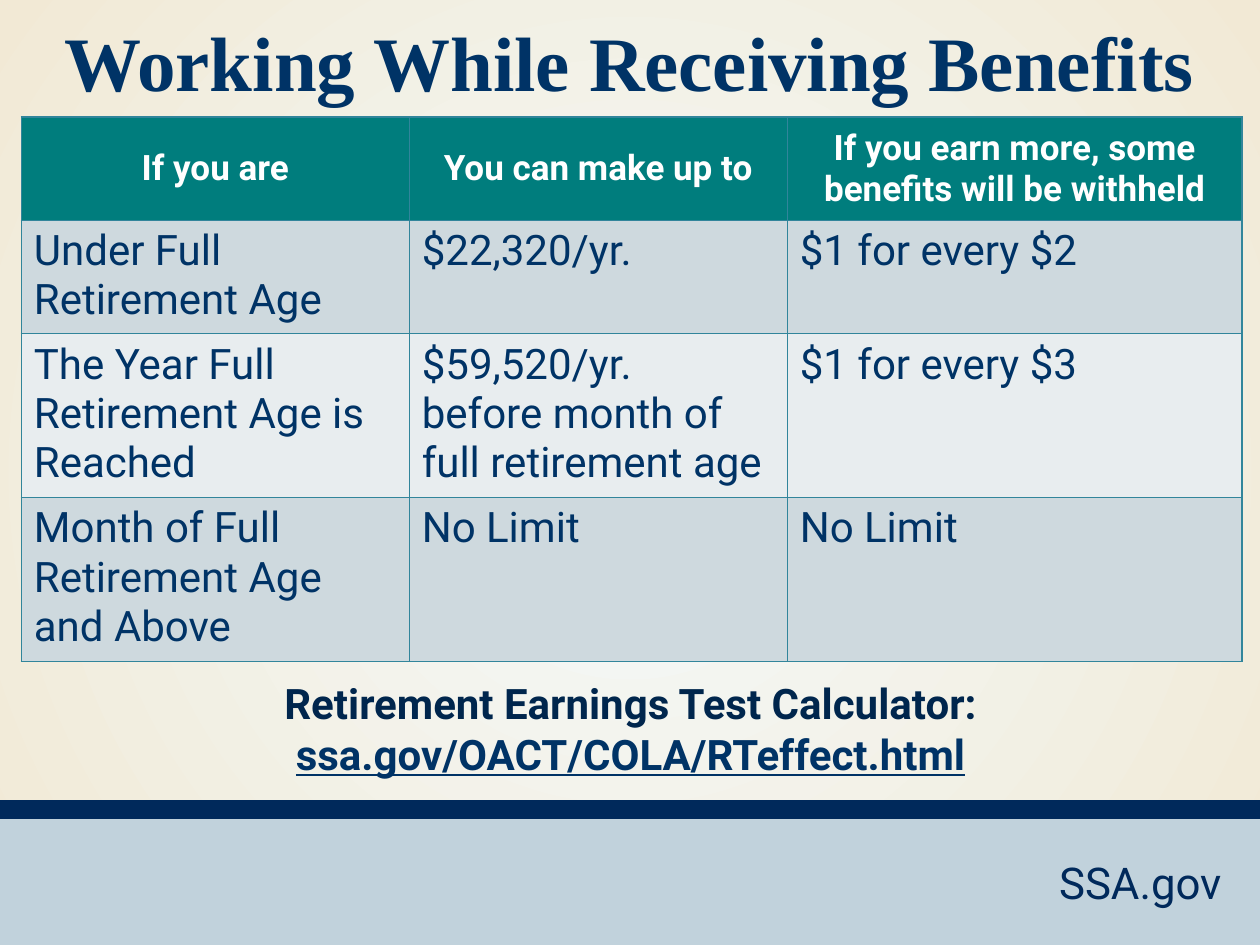
from lxml import etree
from pptx import Presentation
from pptx.dml.color import RGBColor
from pptx.enum.shapes import MSO_SHAPE
from pptx.enum.text import MSO_ANCHOR, MSO_AUTO_SIZE, PP_ALIGN
from pptx.oxml.ns import qn
from pptx.util import Cm, Pt

RECT = MSO_SHAPE.RECTANGLE
TOP, MIDDLE = MSO_ANCHOR.TOP, MSO_ANCHOR.MIDDLE
LEFT, CENTER, RIGHT = PP_ALIGN.LEFT, PP_ALIGN.CENTER, PP_ALIGN.RIGHT
NO_AUTOFIT = MSO_AUTO_SIZE.NONE

GLOW = RGBColor(0xF3, 0xFA, 0xFB)
CREAM = RGBColor(0xF2, 0xE9, 0xD5)
NAVY = RGBColor(0x00, 0x29, 0x5B)
INK = RGBColor(0x00, 0x33, 0x66)
DARK_INK = RGBColor(0x00, 0x26, 0x4D)
MIST = RGBColor(0xC1, 0xD2, 0xDC)
TEAL = RGBColor(0x00, 0x7D, 0x7D)
BORDER = RGBColor(0x31, 0x85, 0x9B)
BAND_DARK = RGBColor(0xCE, 0xD9, 0xDE)
BAND_LIGHT = RGBColor(0xE8, 0xED, 0xEF)
WHITE = RGBColor(0xFF, 0xFF, 0xFF)

SANS, SERIF = "Roboto", "Times New Roman"

ROWS = [
    ["If you are", "You can make up to",
     "If you earn more, some benefits will be withheld"],
    ["Under Full Retirement Age", "$22,320/yr.", "$1 for every $2"],
    ["The Year Full Retirement Age is Reached",
     "$59,520/yr.\vbefore month of full retirement age", "$1 for every $3"],
    ["Month of Full Retirement Age\vand Above", "No Limit", "No Limit"],
]
COL_WIDTHS = [7.82, 7.62, 9.17]
ROW_HEIGHTS = [2.08, 2.08, 2.79, 2.69]
CALCULATOR = [("Retirement Earnings Test Calculator:", DARK_INK, False),
              ("ssa.gov/OACT/COLA/RTeffect.html", INK, True)]


def format_paragraph(p, size, color, align, font=SANS, bold=False, underline=None):
    p.alignment = align
    for r in p.runs:
        f = r.font
        f.name, f.size, f.bold, f.underline = font, Pt(size), bold, underline
        f.color.rgb = color


def place(s, left, top, width, height):
    s.left, s.top, s.width, s.height = Cm(left), Cm(top), Cm(width), Cm(height)


def add_background(slide):
    fill = slide.background.fill
    fill.gradient()
    for stop, color in zip(fill.gradient_stops, (GLOW, CREAM)):
        stop.color.rgb = color
    # Radial gradient from the centre
    grad = slide.element.find(".//" + qn("a:gradFill"))
    grad.remove(grad.find(qn("a:lin")))
    circle = etree.SubElement(grad, qn("a:path"), path="circle")
    etree.SubElement(circle, qn("a:fillToRect"),
                     dict.fromkeys("ltrb", "50000"))


def add_bar(slide, left, top, width, height, color):
    s = slide.shapes.add_shape(RECT, Cm(left), Cm(top), Cm(width), Cm(height))
    s.shadow.inherit = False
    s.fill.solid()
    s.fill.fore_color.rgb = color
    s.line.fill.background()


def add_footer(slide, left, top, width, height):
    add_bar(slide, left, top + 0.25, width, height - 0.25, MIST)
    add_bar(slide, left, top, width, 0.38, NAVY)
    box = slide.shapes.add_textbox(Cm(left + width - 8.33), Cm(top + 0.99),
                                   Cm(7.8), Cm(1.32))
    tf = box.text_frame
    tf.word_wrap = True
    tf.text = "SSA.gov"
    format_paragraph(tf.paragraphs[0], 25, NAVY, RIGHT)


def fill_title(title, left, top, width, height):
    place(title, left, top, width, height)
    tf = title.text_frame
    tf.text = "Working While Receiving Benefits"
    tf.auto_size = NO_AUTOFIT
    tf.vertical_anchor = TOP
    tf.margin_top, tf.margin_bottom = Cm(0.29), 0
    format_paragraph(tf.paragraphs[0], 44, INK, CENTER, SERIF, bold=True)


def set_borders(cell):
    tc_pr = cell._tc.get_or_add_tcPr()
    for i, side in enumerate(("lnL", "lnR", "lnT", "lnB")):
        ln = etree.Element(qn("a:" + side), w=str(Pt(1)))
        solid = etree.SubElement(ln, qn("a:solidFill"))
        etree.SubElement(solid, qn("a:srgbClr"), val=str(BORDER))
        tc_pr.insert(i, ln)


def add_limits_table(slide, left, top):
    table = slide.shapes.add_table(
        len(ROWS), len(COL_WIDTHS), Cm(left), Cm(top),
        Cm(sum(COL_WIDTHS)), Cm(sum(ROW_HEIGHTS))).table
    for column, width in zip(table.columns, COL_WIDTHS):
        column.width = Cm(width)
    for i, (row, height) in enumerate(zip(table.rows, ROW_HEIGHTS)):
        row.height = Cm(height)
        header = i == 0
        band = TEAL if header else BAND_DARK if i % 2 else BAND_LIGHT
        for cell, text in zip(row.cells, ROWS[i]):
            cell.text = text
            cell.fill.solid()
            cell.fill.fore_color.rgb = band
            cell.vertical_anchor = MIDDLE if header else TOP
            p = cell.text_frame.paragraphs[0]
            if header:
                format_paragraph(p, 20, WHITE, CENTER, bold=True)
            else:
                format_paragraph(p, 24, INK, LEFT)
            set_borders(cell)


def fill_calculator(body, left, top, width, height):
    place(body, left, top, width, height)
    tf = body.text_frame
    tf.text = "\n".join(text for text, _, _ in CALCULATOR)
    tf.auto_size = NO_AUTOFIT
    for p, (_, color, underline) in zip(tf.paragraphs, CALCULATOR):
        p_pr = p._p.get_or_add_pPr()
        p_pr.set("marL", "0")
        p_pr.set("indent", "0")
        etree.SubElement(p_pr, qn("a:buNone"))
        p.space_before = Pt(0)
        format_paragraph(p, 24, color, CENTER, bold=True, underline=underline)


def main():
    prs = Presentation()
    prs.slide_width, prs.slide_height = Cm(25.4), Cm(19.05)
    slide = prs.slides.add_slide(prs.slide_layouts[1])
    title, body = slide.placeholders
    add_background(slide)
    add_footer(slide, 0, 16.13, 25.4, 2.92)
    fill_title(title, 0, 0, 25.4, 1.93)
    add_limits_table(slide, 0.43, 2.36)
    fill_calculator(body, 1.09, 13.54, 23.24, 2.54)
    prs.save("out.pptx")


if __name__ == "__main__":
    main()
